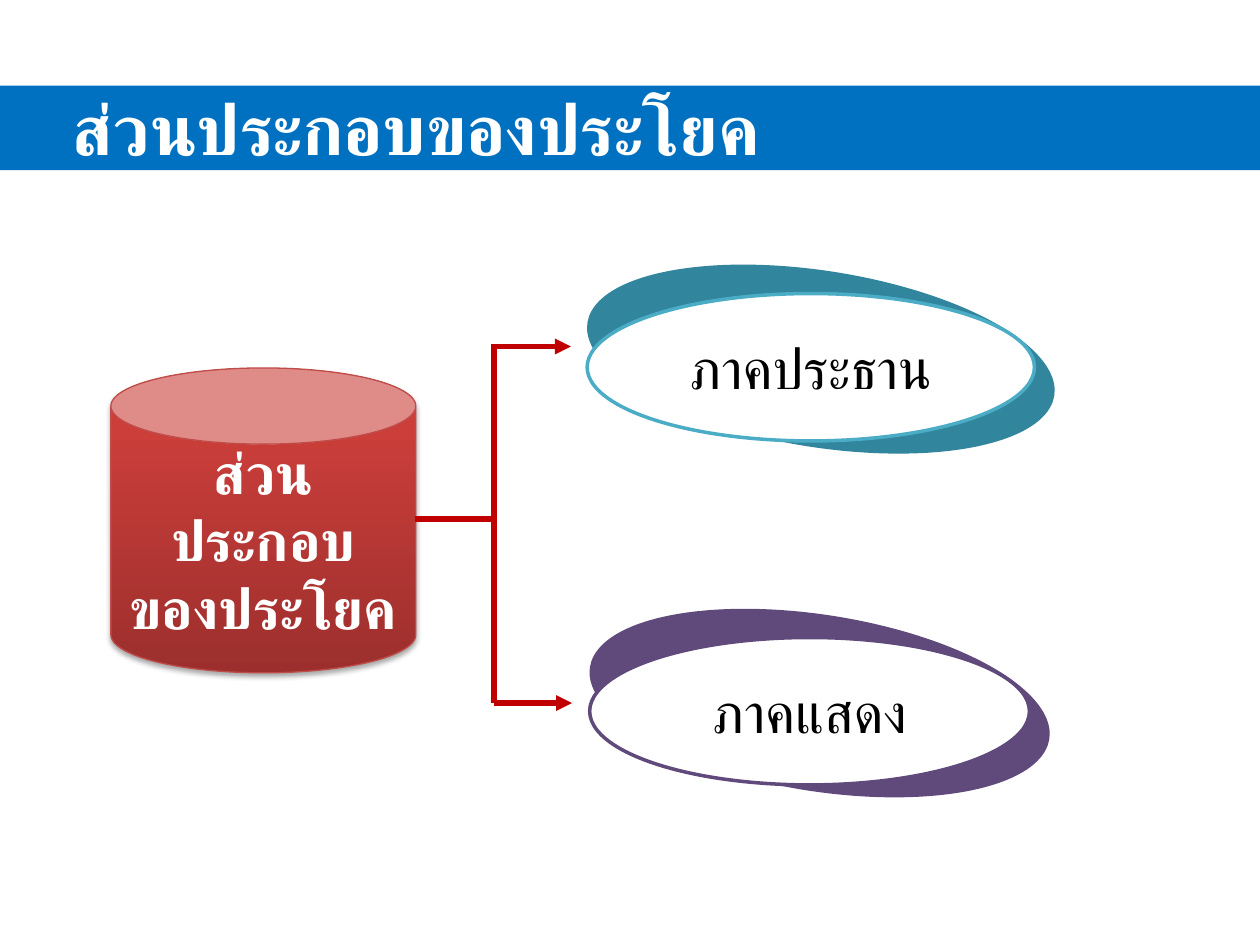
from copy import deepcopy

from lxml import etree
from pptx import Presentation
from pptx.dml.color import RGBColor
from pptx.enum.shapes import MSO_CONNECTOR, MSO_SHAPE
from pptx.enum.text import MSO_ANCHOR, PP_ALIGN
from pptx.oxml import parse_xml
from pptx.oxml.ns import nsdecls, qn
from pptx.util import Inches, Pt

RECTANGLE, CAN, OVAL = MSO_SHAPE.RECTANGLE, MSO_SHAPE.CAN, MSO_SHAPE.OVAL
STRAIGHT = MSO_CONNECTOR.STRAIGHT
LEFT, CENTER, MIDDLE = PP_ALIGN.LEFT, PP_ALIGN.CENTER, MSO_ANCHOR.MIDDLE

COLORS = {
    "white": "FFFFFF", "black": "000000", "banner": "0070C0",
    "can dark": "9C2F2D", "can mid": "CB3E3A", "can light": "CE3B37",
    "can line": "BF4C48", "arrow": "C00000",
    "teal": "31859C", "aqua": "4BACC6", "purple": "604A7B",
}


def color(name):
    return RGBColor.from_string(COLORS[name])


def add_shape(kind, box, fill=None, line=None, line_width=2, text="", size=32,
              font="Roboto", text_color="white", bold=False, align=CENTER):
    """Add a preset shape; each line of text becomes a paragraph."""
    shape = slide.shapes.add_shape(kind, *map(Inches, box))
    shape.shadow.inherit = False
    if fill:
        shape.fill.solid()
        shape.fill.fore_color.rgb = color(fill)
    if line:
        shape.line.color.rgb = color(line)
        shape.line.width = Pt(line_width)
    else:
        shape.line.fill.background()
    if text:
        frame = shape.text_frame
        frame.word_wrap = True
        frame.vertical_anchor = MIDDLE
        frame.text = text
        for paragraph in frame.paragraphs:
            paragraph.alignment = align
            for run in paragraph.runs:
                run.font.name = font
                run.font.size = Pt(size)
                run.font.bold = bold
                run.font.color.rgb = color(text_color)
    return shape


presentation = Presentation()
presentation.slide_width, presentation.slide_height = Inches(10), Inches(7.5)
slide = presentation.slides.add_slide(presentation.slide_layouts[6])

add_shape(RECTANGLE, (-0.02, 0.68, 10.02, 0.67), fill="banner",
          text="\tส่วนประกอบของประโยค", size=40, font="Calibri", bold=True, align=LEFT)

# Can with a vertical gradient and a soft shadow
can = add_shape(CAN, (0.88, 2.92, 2.42, 2.42), line="can line", line_width=0.75,
                text="ส่วนประกอบ\nของประโยค", bold=True)
can.fill.gradient()
can.fill.gradient_angle = 90
properties = can._element.spPr
stop_list = properties.find(".//" + qn("a:gsLst"))
stop_list.append(deepcopy(stop_list[-1]))
gradient = ((0, "can dark"), (0.8, "can mid"), (1, "can light"))
for stop, (position, name) in zip(can.fill.gradient_stops, gradient):
    stop.position = position
    stop.color.rgb = color(name)
properties.find(qn("a:effectLst")).append(parse_xml(
    f'<a:outerShdw {nsdecls("a")} blurRad="{Pt(3.1)}" dist="{Pt(1.8)}" dir="5400000" '
    f'rotWithShape="0"><a:srgbClr val="{COLORS["black"]}"><a:alpha val="35000"/>'
    '</a:srgbClr></a:outerShdw>'))

# Bracket from the can to the two parts
TRUNK, UPPER, LOWER = 3.92, 2.75, 5.58
bracket = [
    (3.29, 4.12, TRUNK, 4.12, False),
    (TRUNK, UPPER, TRUNK, LOWER, False),
    (3.9, UPPER, 4.53, UPPER, True),
    (TRUNK, LOWER, 4.54, LOWER, True),
]
for *ends, has_arrow in bracket:
    connector = slide.shapes.add_connector(STRAIGHT, *map(Inches, ends))
    connector.line.color.rgb = color("arrow")
    connector.line.width = Pt(3)
    properties = connector._element.spPr
    if has_arrow:
        etree.SubElement(properties.find(qn("a:ln")), qn("a:tailEnd"), type="triangle")
    etree.SubElement(properties, qn("a:effectLst"))

# Each part: a tilted ellipse behind a white one
parts = [
    ("ภาคประธาน", 4.64, 2.15, 3.75, "teal", "aqua"),
    ("ภาคแสดง", 4.66, 4.88, 3.69, "purple", "purple"),
]
for label, left, top, width, back, outline in parts:
    tilted = add_shape(OVAL, (left, top, width, 1.4), fill=back)
    tilted.rotation = 8.9
    add_shape(OVAL, (left + 0.02, top + 0.18, width - 0.2, 1.17), fill="white",
              line=outline, text=label, text_color="black")

presentation.save("out.pptx")
